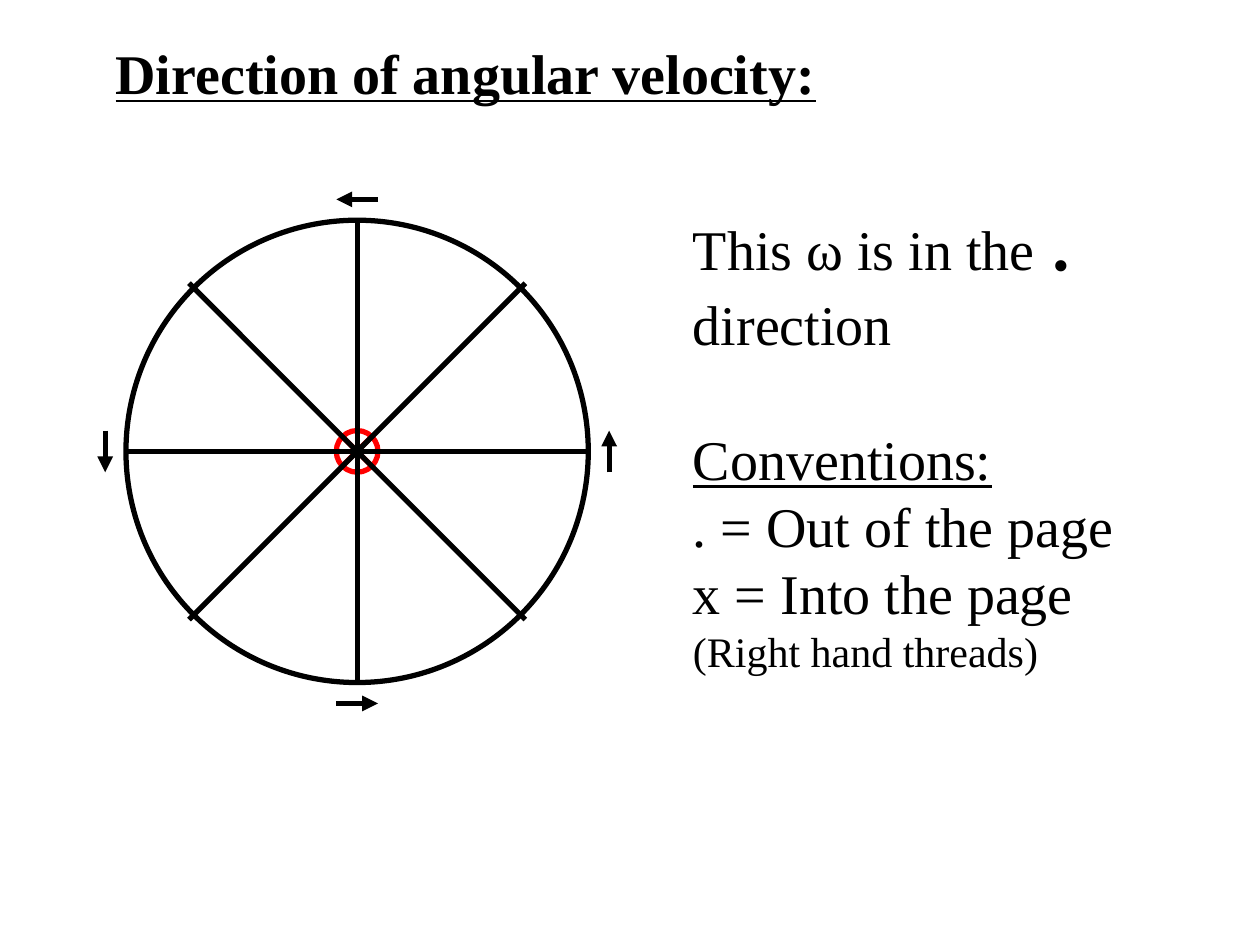
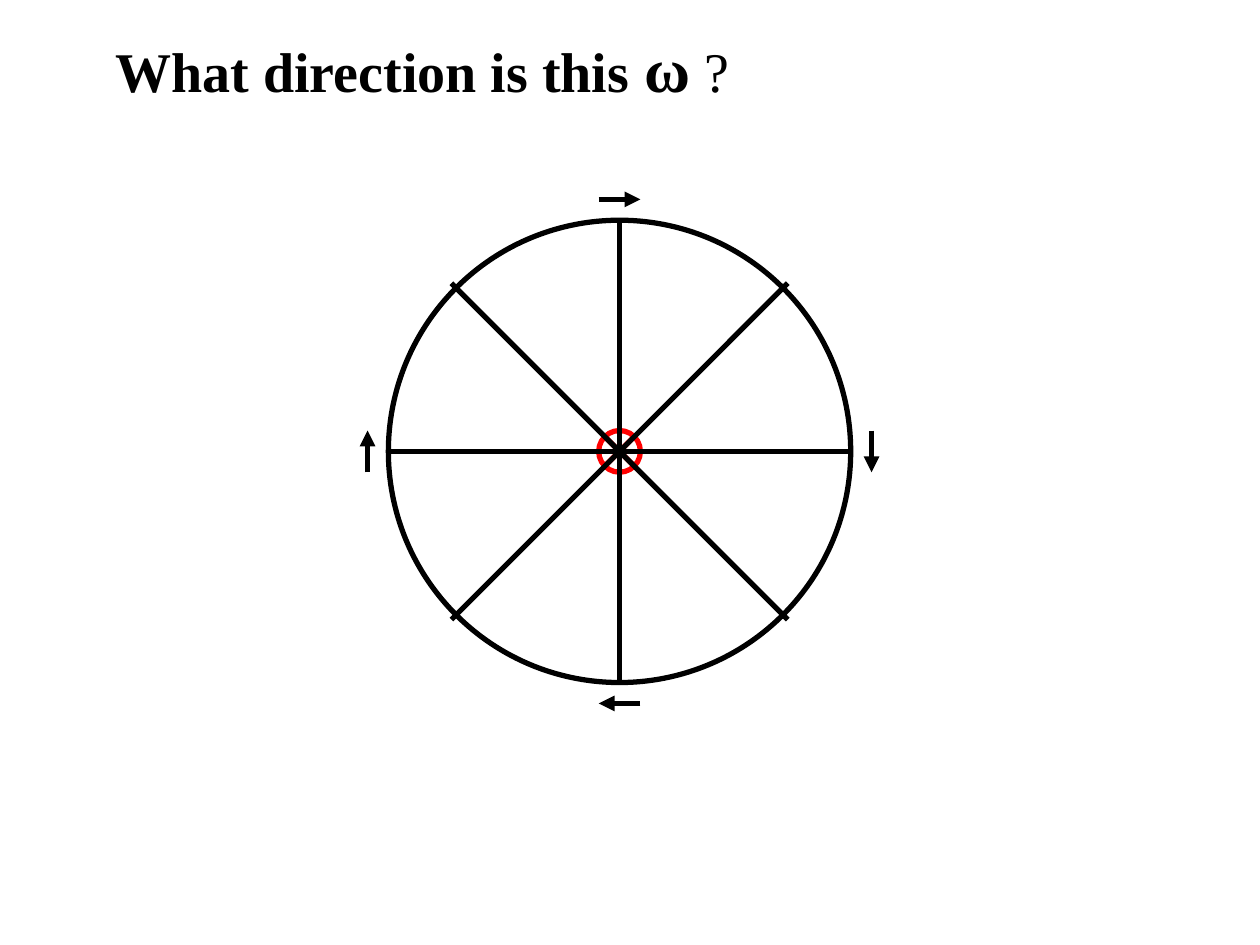
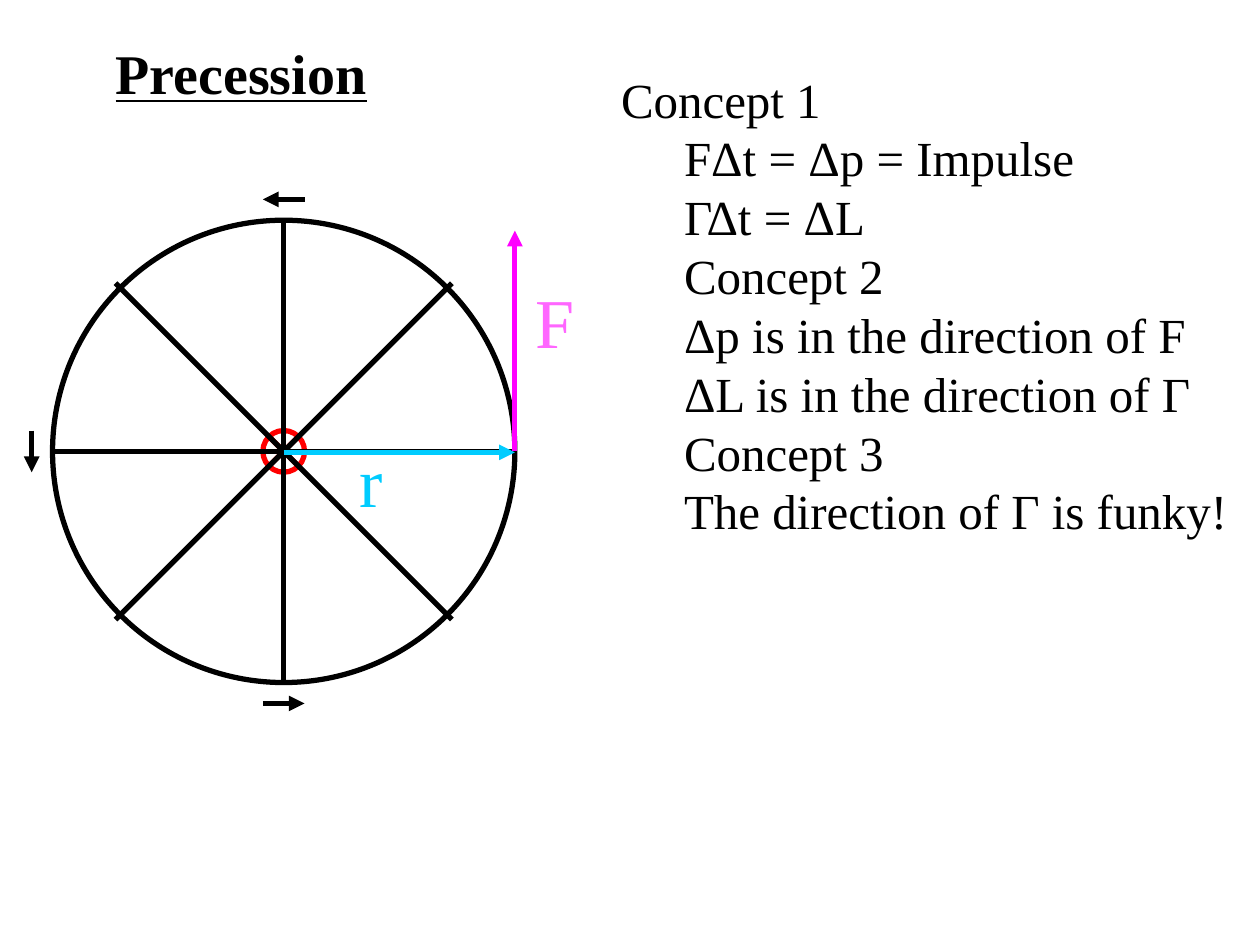
from lxml.etree import SubElement
from pptx import Presentation
from pptx.dml.color import RGBColor
from pptx.enum.shapes import MSO_CONNECTOR, MSO_SHAPE
from pptx.enum.text import MSO_AUTO_SIZE
from pptx.oxml.ns import qn
from pptx.util import Cm, Pt

FONT = "Times New Roman"
BLACK, WHITE, RED = "000000", "FFFFFF", "FF0000"
CYAN, MAGENTA, PINK = "00CCFF", "FF00FF", "FF66FF"
TITLE_SIZE = 32
LINE_WIDTH = 3
WHEEL_Y = 9.1
RIM, HUB, DIAGONAL = 4.66, 0.42, 3.39
ARROW_ORBIT, ARROW_HALF = 5.08, 0.42
TOP, LEFT, BOTTOM, RIGHT = (0, -1), (-1, 0), (0, 1), (1, 0)
SIDES = [TOP, LEFT, BOTTOM, RIGHT]
CORNERS = [(1, -1), (1, 1), (-1, 1), (-1, -1)]


def color(value):
    return RGBColor.from_string(value)


def add_line(shapes, x1, y1, x2, y2, line_color=BLACK, arrow=False):
    c = shapes.add_connector(MSO_CONNECTOR.STRAIGHT, Cm(x1), Cm(y1), Cm(x2), Cm(y2))
    c.line.color.rgb = color(line_color)
    c.line.width = Pt(LINE_WIDTH)
    if arrow:
        SubElement(c.line._get_or_add_ln(), qn("a:tailEnd"), type="triangle")
    SubElement(c._element.spPr, qn("a:effectLst"))


def add_disc(shapes, kind, x, y, radius, line_color):
    sp = shapes.add_shape(kind, Cm(x - radius), Cm(y - radius), Cm(2 * radius), Cm(2 * radius))
    sp.shadow.inherit = False
    sp.fill.solid()
    sp.fill.fore_color.rgb = color(WHITE)
    sp.line.color.rgb = color(line_color)
    sp.line.width = Pt(LINE_WIDTH)


def add_wheel(s, x):
    shapes = s.shapes.add_group_shape().shapes
    add_disc(shapes, MSO_SHAPE.OVAL, x, WHEEL_Y, RIM, BLACK)
    add_disc(shapes, MSO_SHAPE.FLOWCHART_SUMMING_JUNCTION, x, WHEEL_Y, HUB, RED)
    for directions, reach in ((SIDES, RIM), (CORNERS, DIAGONAL)):
        for dx, dy in directions:
            add_line(shapes, x, WHEEL_Y, x + reach * dx, WHEEL_Y + reach * dy)


def add_spin_arrows(s, x, sides=SIDES, clockwise=False):
    half = -ARROW_HALF if clockwise else ARROW_HALF
    for dx, dy in sides:
        mx, my = x + ARROW_ORBIT * dx, WHEEL_Y + ARROW_ORBIT * dy
        tx, ty = half * dy, -half * dx
        add_line(s.shapes, mx - tx, my - ty, mx + tx, my + ty, arrow=True)


def add_text_frame(s, left, top, width, height, wrap=True):
    tf = s.shapes.add_textbox(Cm(left), Cm(top), Cm(width), Cm(height)).text_frame
    tf.word_wrap = wrap
    tf.auto_size = MSO_AUTO_SIZE.SHAPE_TO_FIT_TEXT
    return tf


def add_run(p, text, size, bold=False, underline=False, text_color=BLACK):
    r = p.add_run()
    r.text = text
    r.font.name = FONT
    r.font.size = Pt(size)
    r.font.bold = bold
    r.font.underline = underline
    r.font.color.rgb = color(text_color)


def add_title(s, text, width):
    tf = add_text_frame(s, 2.08, 0.66, width, 1.6, wrap=False)
    add_run(tf.paragraphs[0], text, TITLE_SIZE, bold=True, underline=True)


def add_label(s, text, left, top, width, text_color):
    tf = add_text_frame(s, left, top, width, 1.96, wrap=False)
    add_run(tf.paragraphs[0], text, 40, text_color=text_color)


def build_direction(s):
    x = 7.2
    add_wheel(s, x)
    add_spin_arrows(s, x)
    add_title(s, "Direction of angular velocity:", 14.66)
    tf = add_text_frame(s, 13.72, 3.43, 11.05, 10.31)
    p = tf.paragraphs[0]
    for text, size in (("This ω is in the ", 32), (". ", 54), ("direction", 32)):
        add_run(p, text, size)
    p = tf.add_paragraph()
    p.space_before = Pt(38.4)
    add_run(p, "Conventions:", 32, underline=True)
    for text, size in ((". = Out of the page", 32), ("x = Into the page", 32),
                       ("(Right hand threads)", 24)):
        add_run(tf.add_paragraph(), text, size)


def build_question(s):
    x = 12.49
    add_wheel(s, x)
    add_spin_arrows(s, x, clockwise=True)
    p = add_text_frame(s, 2.08, 0.48, 13.11, 1.78, wrap=False).paragraphs[0]
    add_run(p, "What direction is this ", TITLE_SIZE, bold=True)
    add_run(p, "ω", 36, bold=True)
    add_run(p, " ?", TITLE_SIZE)


def build_precession(s):
    x = 5.72
    add_wheel(s, x)
    add_spin_arrows(s, x, [TOP, LEFT, BOTTOM])
    add_title(s, "Precession", 5.59)
    tf = add_text_frame(s, 12.27, 1.27, 13.13, 9.75)
    add_run(tf.paragraphs[0], "Concept 1", 28)
    for text in ("FΔt = Δp = Impulse", "ΓΔt = ΔL", "Concept 2",
                 "Δp is in the direction of F", "ΔL is in the direction of Γ",
                 "Concept 3", "The direction of Γ is funky!"):
        p = tf.add_paragraph()
        pPr = p._p.get_or_add_pPr()
        pPr.set("marL", str(Cm(1.27)))
        pPr.set("indent", "0")
        add_run(p, text, 28)
    add_line(s.shapes, x, WHEEL_Y + 0.02, x + RIM, WHEEL_Y + 0.02, CYAN, arrow=True)
    add_label(s, "r", 6.99, 8.69, 0.99, CYAN)
    add_line(s.shapes, x + RIM, WHEEL_Y, x + RIM, 4.65, MAGENTA, arrow=True)
    add_label(s, "F", 10.54, 5.49, 1.3, PINK)


def main():
    prs = Presentation()
    prs.slide_width, prs.slide_height = Cm(25.4), Cm(19.05)
    for build in (build_direction, build_question, build_precession):
        build(prs.slides.add_slide(prs.slide_layouts[6]))
    prs.save("out.pptx")


if __name__ == "__main__":
    main()
